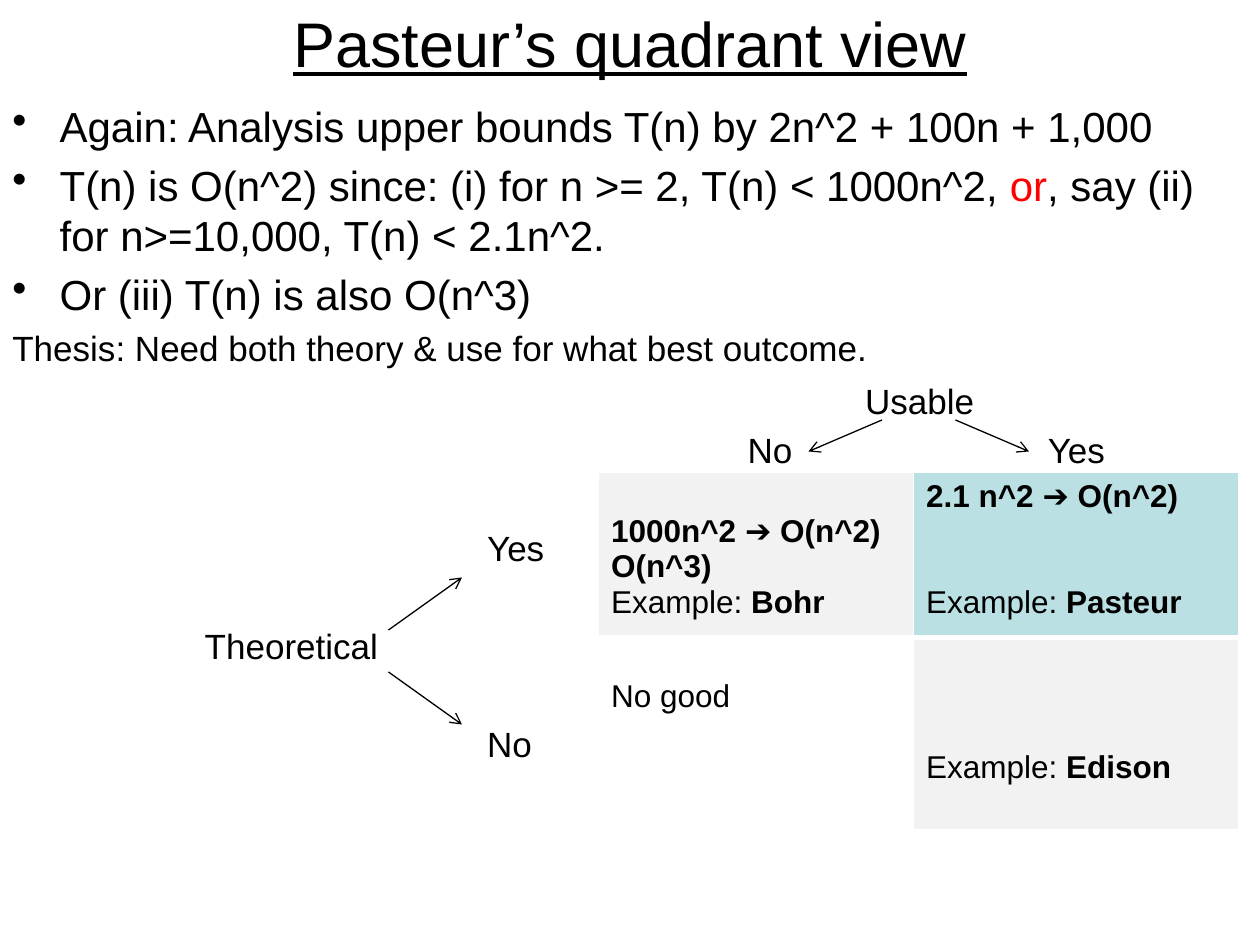
from dataclasses import dataclass

from lxml.etree import SubElement
from pptx import Presentation
from pptx.dml.color import RGBColor
from pptx.enum.shapes import MSO_CONNECTOR
from pptx.enum.text import MSO_ANCHOR, PP_ALIGN
from pptx.oxml import parse_xml
from pptx.oxml.ns import nsdecls, qn
from pptx.util import Inches, Pt

BLACK = RGBColor(0x00, 0x00, 0x00)
RED = RGBColor(0xFF, 0x00, 0x00)
WHITE = RGBColor(0xFF, 0xFF, 0xFF)
GRAY = RGBColor(0xF2, 0xF2, 0xF2)
TEAL = RGBColor(0xBB, 0xE0, 0xE3)
FONT = "Arial"

# The slide is a grid of 120 columns by 90 rows
COLUMNS, ROWS = 120, 90
UNIT = Inches(10) // COLUMNS
LABEL_TOP, LABEL_PITCH = 36.1, 4.67
CELL_LINE = 3.36  # one line of 18 pt text, in grid rows
CELL_INSET = 0.6


@dataclass(frozen=True)
class Span:
    text: str
    bold: bool = False
    color: RGBColor = BLACK


@dataclass(frozen=True)
class Label:
    text: str
    column: float
    line: int


@dataclass(frozen=True)
class Arrow:
    start: tuple[int, int]
    end: tuple[int, int]


@dataclass(frozen=True)
class Quadrant:
    fill: RGBColor
    lines: list[list[Span]]
    lines_above: int = 0
    gap_lines: int = 0  # free lines before the last paragraph


BULLETS = [
    [Span("Again: Analysis upper bounds T(n) by 2n^2 + 100n + 1,000")],
    [Span("T(n) is O(n^2) since: (i) for n >= 2, T(n) < 1000n^2, "),
     Span("or", color=RED),
     Span(", say (ii) for n>=10,000, T(n) < 2.1n^2.")],
    [Span("Or (iii) T(n) is also O(n^3)")],
]
THESIS = [Span("Thesis: Need both theory & use for what best outcome.")]
LABELS = [
    Label("Usable", 82.4, 0),
    Label("No", 71.2, 1),
    Label("Yes", 99.8, 1),
    Label("Yes", 46.4, 3),
    Label("Theoretical", 19.5, 5),
    Label("No", 46.4, 7),
]
ARROWS = [
    Arrow((37, 60), (44, 55)),
    Arrow((37, 64), (44, 69)),
    Arrow((84, 40), (77, 43)),
    Arrow((91, 40), (98, 43)),
]


def example(name: str) -> list[Span]:
    return [Span("Example: "), Span(name, bold=True)]


QUADRANTS = [
    [Quadrant(GRAY, [[Span("1000n^2 ➔ O(n^2)", True)], [Span("O(n^3)", True)],
                     example("Bohr")], lines_above=1),
     Quadrant(TEAL, [[Span("2.1 n^2 ➔ O(n^2)", True)], example("Pasteur")],
              gap_lines=2)],
    [Quadrant(WHITE, [[Span("No good")]], lines_above=1),
     Quadrant(GRAY, [example("Edison")], lines_above=3)],
]


def grid(count: float) -> int:
    return round(count * UNIT)


def write(paragraph, spans: list[Span], size: float, underline: bool = False) -> None:
    for span in spans:
        run = paragraph.add_run()
        run.text = span.text
        font = run.font
        font.name, font.size, font.bold = FONT, Pt(size), span.bold
        font.color.rgb = span.color
        if underline:
            font.underline = True


def add_box(page, left: float, top: float, width: float, height: float):
    box = page.shapes.add_textbox(grid(left), grid(top), grid(width), grid(height))
    box.text_frame.word_wrap = True
    return box.text_frame


def add_title(page) -> None:
    frame = add_box(page, 6, 0, 108, 8)
    frame.vertical_anchor = MSO_ANCHOR.MIDDLE
    frame.paragraphs[0].alignment = PP_ALIGN.CENTER
    write(frame.paragraphs[0], [Span("Pasteur’s quadrant view")], 36, underline=True)


def add_body(page) -> None:
    frame = add_box(page, 0, 9, COLUMNS, 27)
    for index, spans in enumerate([*BULLETS, THESIS]):
        paragraph = frame.paragraphs[0] if index == 0 else frame.add_paragraph()
        bulleted = spans is not THESIS
        size = 24 if bulleted else 20
        paragraph.space_before = Pt(size * 0.2)
        if bulleted:
            properties = paragraph._p.get_or_add_pPr()
            properties.set("marL", str(grid(4.5)))
            properties.set("indent", str(-grid(4.5)))
            SubElement(properties, qn("a:buChar")).set("char", "•")
        write(paragraph, spans, size)


def add_label(page, label: Label) -> None:
    top = LABEL_TOP + label.line * LABEL_PITCH
    frame = add_box(page, label.column, top, 18, 4)
    frame.margin_left = frame.margin_right = frame.margin_top = frame.margin_bottom = 0
    write(frame.paragraphs[0], [Span(label.text)], 20)


def add_arrow(page, arrow: Arrow) -> None:
    points = [grid(value) for value in (*arrow.start, *arrow.end)]
    connector = page.shapes.add_connector(MSO_CONNECTOR.STRAIGHT, *points)
    connector.line.color.rgb = BLACK
    connector.line.width = Pt(0.75)
    SubElement(connector.line._get_or_add_ln(), qn("a:tailEnd")).set("type", "arrow")
    SubElement(connector._element.spPr, qn("a:effectLst"))


def set_borders(cell, top: float, bottom: float) -> None:
    properties = cell._tc.get_or_add_tcPr()
    widths = {"lnL": 1, "lnR": 1, "lnT": top, "lnB": bottom}
    for position, (side, width) in enumerate(widths.items()):
        properties.insert(position, parse_xml(
            f'<a:{side} {nsdecls("a")} w="{Pt(width)}"><a:solidFill>'
            f'<a:srgbClr val="{WHITE}"/></a:solidFill></a:{side}>'))


def fill_cell(cell, quadrant: Quadrant) -> None:
    cell.fill.solid()
    cell.fill.fore_color.rgb = quadrant.fill
    cell.margin_top = grid(CELL_INSET + quadrant.lines_above * CELL_LINE)
    frame = cell.text_frame
    for index, spans in enumerate(quadrant.lines):
        paragraph = frame.paragraphs[0] if index == 0 else frame.add_paragraph()
        write(paragraph, spans, 18)
    if quadrant.gap_lines:
        paragraph.space_before = grid(quadrant.gap_lines * CELL_LINE)


def add_quadrants(page) -> None:
    table = page.shapes.add_table(2, 2, grid(57), grid(45), grid(61), grid(34)).table
    table.first_row = table.horz_banding = False
    table.columns[0].width, table.columns[1].width = grid(30), grid(31)
    table.rows[0].height, table.rows[1].height = grid(15.7), grid(18.3)
    for row, quadrants in enumerate(QUADRANTS):
        for column, quadrant in enumerate(quadrants):
            cell = table.cell(row, column)
            fill_cell(cell, quadrant)
            set_borders(cell, *((1, 3) if row == 0 else (3, 1)))


def main() -> None:
    deck = Presentation()
    deck.slide_width, deck.slide_height = grid(COLUMNS), grid(ROWS)
    page = deck.slides.add_slide(deck.slide_layouts[6])
    add_title(page)
    add_body(page)
    for label in LABELS:
        add_label(page, label)
    add_quadrants(page)
    for arrow in ARROWS:
        add_arrow(page, arrow)


    deck.save("out.pptx")


if __name__ == "__main__":
    main()
